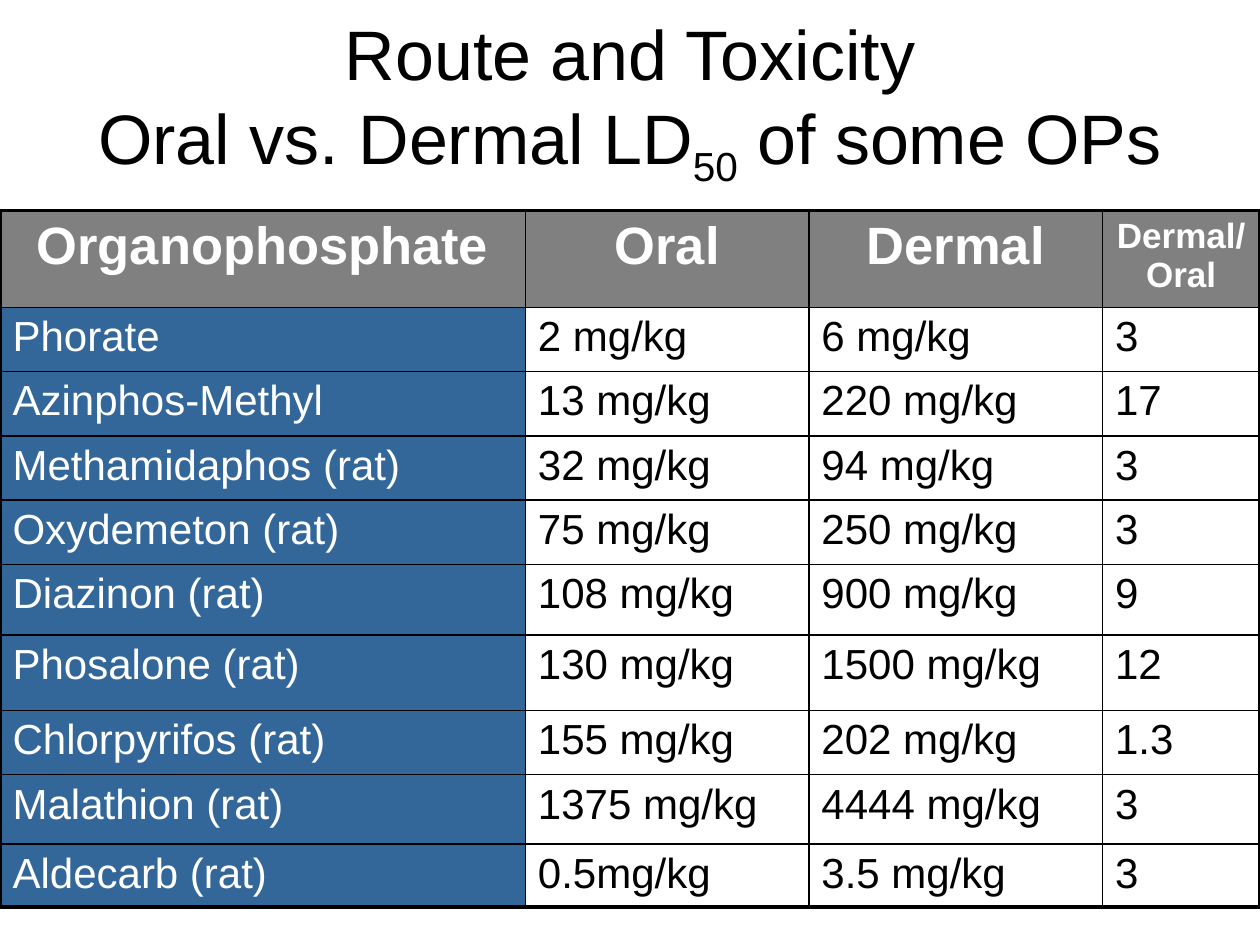
from lxml import etree
from pptx import Presentation
from pptx import util as u
from pptx.dml import color
from pptx.enum import text
from pptx.oxml import ns

WIDTH, HEIGHT = u.Inches(10), u.Inches(7.5)
BLACK, WHITE, GREY, BLUE = "000000", "FFFFFF", "808080", "336699"
THIN, THICK = 1, 2.25
COLUMNS = [4.17, 2.25, 2.33, 1.25]
ROWS = [0.77, 0.51, 0.51, 0.51, 0.51, 0.56, 0.6, 0.51, 0.55, 0.5]
HEADINGS = ["Organophosphate", "Oral", "Dermal", "Dermal/Oral"]
DOSES = [
    ("Phorate", "2 mg/kg", "6 mg/kg", "3"),
    ("Azinphos-Methyl", "13 mg/kg", "220 mg/kg", "17"),
    ("Methamidaphos (rat)", "32 mg/kg", "94 mg/kg", "3"),
    ("Oxydemeton (rat)", "75 mg/kg", "250 mg/kg", "3"),
    ("Diazinon (rat)", "108 mg/kg", "900 mg/kg", "9"),
    ("Phosalone (rat)", "130 mg/kg", "1500 mg/kg", "12"),
    ("Chlorpyrifos (rat)", "155 mg/kg", "202 mg/kg", "1.3"),
    ("Malathion (rat)", "1375 mg/kg", "4444 mg/kg", "3"),
    ("Aldecarb (rat)", "0.5mg/kg", "3.5 mg/kg", "3"),
]


def rgb(value):
    return color.RGBColor.from_string(value)


def set_all(target, values):
    for key, value in values.items():
        setattr(target, key, value)


def style_font(font, size, shade, bold=False):
    set_all(font, {"name": "Arial", "size": u.Pt(size), "bold": bold})
    font.color.rgb = rgb(shade)


def add_title(slide, box):
    title = slide.shapes.title
    set_all(title, dict(zip(("left", "top", "width", "height"), box)))
    frame = title.text_frame
    set_all(frame, {"word_wrap": True, "vertical_anchor": text.MSO_ANCHOR.MIDDLE,
                    "auto_size": text.MSO_AUTO_SIZE.NONE})
    heading = frame.paragraphs[0]
    heading.alignment = text.PP_ALIGN.CENTER
    heading.text = "Route and Toxicity\vOral vs. Dermal LD"
    subscript = heading.add_run()
    subscript.text = "50"
    subscript.font.bold = False
    heading.add_run().text = " of some OPs"
    for run in heading.runs:
        style_font(run.font, 40, BLACK)
    subscript.font._element.set("baseline", "-25000")


def add_borders(cell, widths):
    properties = cell._tc.get_or_add_tcPr()
    for position, (side, width) in enumerate(widths.items()):
        line = etree.Element(ns.qn(f"a:ln{side}"), w=str(int(u.Pt(width))))
        fill = etree.SubElement(line, ns.qn("a:solidFill"))
        etree.SubElement(fill, ns.qn("a:srgbClr"), val=BLACK)
        properties.insert(position, line)


def fill_cell(cell, words, row, column):
    header, first, last = row == 0, column == 0, column == len(COLUMNS) - 1
    if header or first:
        cell.fill.solid()
        cell.fill.fore_color.rgb = rgb(GREY if header else BLUE)
    else:
        cell.fill.background()
    entry = cell.text_frame.paragraphs[0]
    entry.alignment = text.PP_ALIGN.CENTER if header else text.PP_ALIGN.LEFT
    run = entry.add_run()
    run.text = words
    size = (20 if last else 30) if header else 24
    style_font(run.font, size, WHITE if header or first else BLACK, header)
    add_borders(cell, {
        "L": THICK if first else THIN,
        "R": THICK if last else THIN,
        "T": THICK if header else THIN,
        "B": THICK if row == len(ROWS) - 1 else THIN,
    })


def add_dose_table(slide, box):
    left, top, width, height = box
    table = slide.shapes.add_table(len(ROWS), len(COLUMNS), *box).table
    set_all(table, {"first_row": False, "horz_banding": False})
    for column, share in zip(table.columns, COLUMNS):
        column.width = int(width * share / sum(COLUMNS))
    for row, share in zip(table.rows, ROWS):
        row.height = int(height * share / sum(ROWS))
    for row, entries in enumerate([HEADINGS, *DOSES]):
        for column, words in enumerate(entries):
            fill_cell(table.cell(row, column), words, row, column)


def main():
    deck = Presentation()
    set_all(deck, {"slide_width": WIDTH, "slide_height": HEIGHT})
    slide = deck.slides.add_slide(deck.slide_layouts[5])
    add_title(slide, (int(WIDTH * 0.05), u.Inches(0.17), int(WIDTH * 0.9), HEIGHT // 6))
    add_dose_table(slide, (0, u.Inches(1.67), WIDTH, u.Inches(sum(ROWS))))
    deck.save("out.pptx")


if __name__ == "__main__":
    main()
